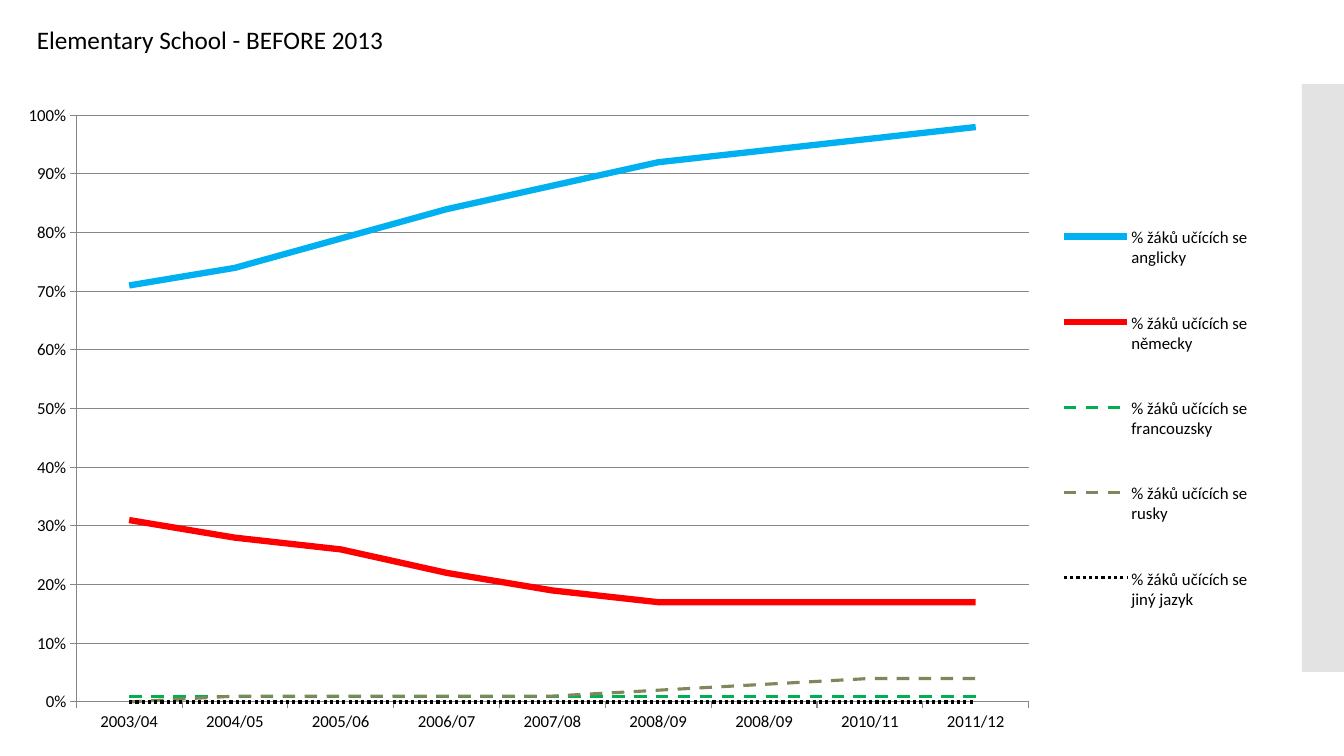
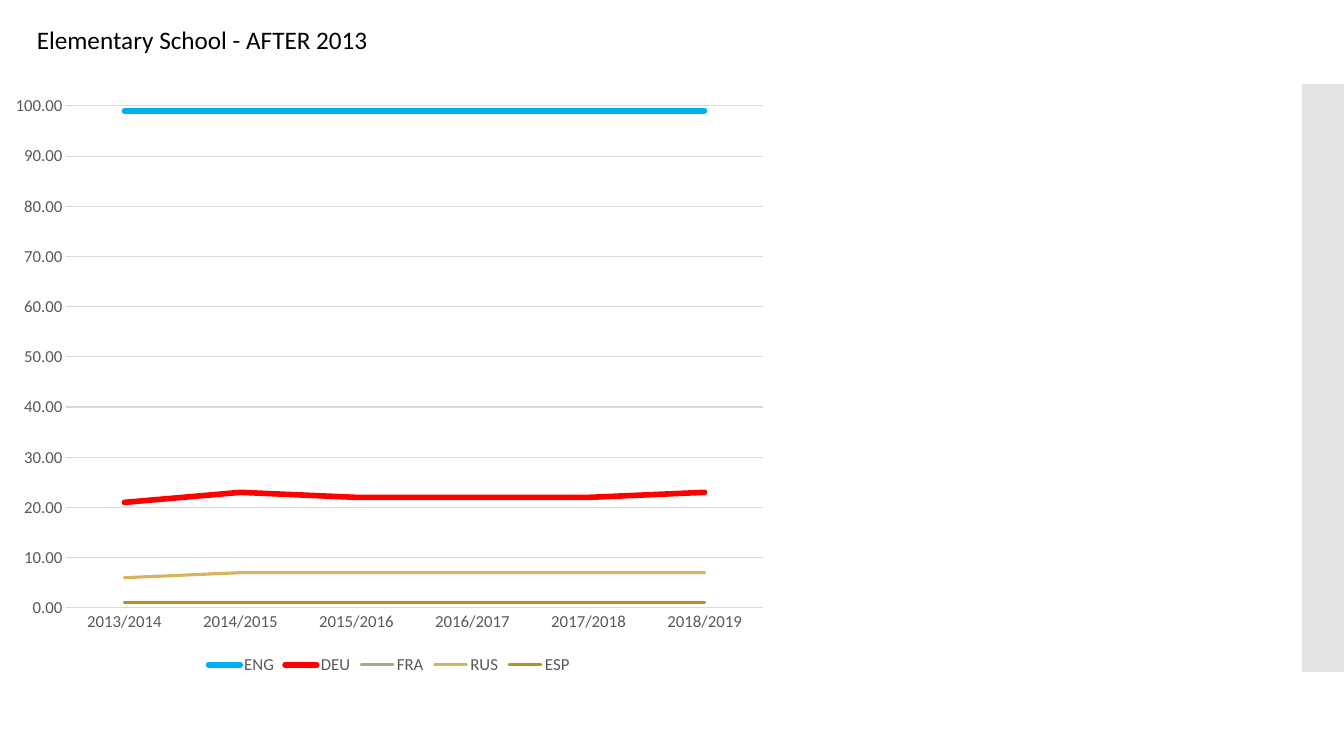
from lxml.etree import SubElement
from pptx import Presentation
from pptx.chart.data import CategoryChartData
from pptx.dml.color import RGBColor
from pptx.enum.chart import XL_CHART_TYPE, XL_LEGEND_POSITION, XL_TICK_MARK
from pptx.enum.dml import MSO_LINE
from pptx.enum.shapes import MSO_SHAPE
from pptx.enum.text import MSO_AUTO_SIZE
from pptx.oxml import parse_xml
from pptx.oxml.ns import nsdecls, qn
from pptx.util import Inches, Pt

FONT = "Calibri"
BLACK, GRAY, RULE, LIGHT = "000000", "595959", "868686", "D9D9D9"
DASH, DOT = MSO_LINE.DASH, MSO_LINE.ROUND_DOT


def rgb(color):
    return RGBColor.from_string(color)


def add_layout(parent, after, box, inner=False):
    for old in parent.findall(qn("c:layout")):
        parent.remove(old)
    x, y, w, h = box
    target = '<c:layoutTarget val="inner"/>' if inner else ""
    layout = parse_xml(
        f'<c:layout {nsdecls("c")}><c:manualLayout>{target}'
        '<c:xMode val="edge"/><c:yMode val="edge"/>'
        f'<c:x val="{x}"/><c:y val="{y}"/><c:w val="{w}"/><c:h val="{h}"/>'
        '</c:manualLayout></c:layout>')
    if after is None:
        parent.insert(0, layout)
    else:
        after.addnext(layout)


prs = Presentation()
prs.slide_width, prs.slide_height = Inches(13.33), Inches(7.5)
W, H = prs.slide_width, prs.slide_height
blank = prs.slide_layouts[6]

pupils = "% žáků učících se "
pages = [
    dict(
        title="Elementary School - BEFORE 2013",
        box=(0, 0.108, 0.945, 0.892),
        cats=["2003/04", "2004/05", "2005/06", "2006/07", "2007/08",
              "2008/09", "2008/09", "2010/11", "2011/12"],
        series=[
            (pupils + "anglicky", "00B0F0", 4.5, None,
             [0.71, 0.74, 0.79, 0.84, 0.88, 0.92, 0.94, 0.96, 0.98]),
            (pupils + "německy", "FF0000", 4.5, None,
             [0.31, 0.28, 0.26, 0.22, 0.19, 0.17, 0.17, 0.17, 0.17]),
            (pupils + "francouzsky", "00B050", 2.25, DASH, [0.01] * 9),
            (pupils + "rusky", "81875A", 2.25, DASH,
             [0, 0.01, 0.01, 0.01, 0.01, 0.02, 0.03, 0.04, 0.04]),
            (pupils + "jiný jazyk", BLACK, 2.25, DOT, [0] * 9),
        ],
        top=1, fmt="0%", text=BLACK, rule=RULE, tick=XL_TICK_MARK.OUTSIDE,
        axis_line=True, legend=XL_LEGEND_POSITION.RIGHT,
        plot_box=(0.06, 0.05, 0.75, 0.87), legend_box=(0.83, 0.15, 0.16, 0.7),
    ),
    dict(
        title="Elementary School - AFTER 2013",
        box=(0, 1 / 9, 0.579, 0.787),
        cats=[f"{year}/{year + 1}" for year in range(2013, 2019)],
        series=[
            ("ENG", "00B0F0", 4, None, [99] * 6),
            ("DEU", "FF0000", 4, None, [21, 23, 22, 22, 22, 23]),
            ("FRA", "A5AB81", 2.25, None, [1] * 6),
            ("RUS", "D8B25C", 2.25, None, [6, 7, 7, 7, 7, 7]),
            ("ESP", "BA8F2D", 2.25, None, [1] * 6),
        ],
        top=100, fmt="0.00", text=GRAY, rule=LIGHT, tick=XL_TICK_MARK.NONE,
        axis_line=False, legend=XL_LEGEND_POSITION.BOTTOM,
        plot_box=None, legend_box=None,
    ),
]

slides = [prs.slides.add_slide(blank) for page in pages]

master_tree = prs.slide_master.shapes.element
for x, w, color, alpha in [(0, 0.283, "94B6D2", 100), (31 / 32, 1 / 32, "C8C8C8", 50)]:
    band = slides[0].shapes.add_shape(
        MSO_SHAPE.RECTANGLE, int(W * x), int(H / 9), int(W * w), int(H * 7 / 9))
    band.shadow.inherit = False
    band.fill.solid()
    band.fill.fore_color.rgb = rgb(color)
    band.line.fill.background()
    if alpha < 100:
        clr = band.element.spPr.find(qn("a:solidFill"))[0]
        SubElement(clr, qn("a:alpha")).set("val", str(alpha * 1000))
    master_tree.insert(2, band.element)

for s, page in zip(slides, pages):
    data = CategoryChartData(number_format=page["fmt"])
    data.categories = page["cats"]
    for name, color, width, dash, vals in page["series"]:
        data.add_series(name, vals)
    x, y, w, h = page["box"]
    chart = s.shapes.add_chart(
        XL_CHART_TYPE.LINE, int(W * x), int(H * y), int(W * w), int(H * h), data).chart
    chart.has_title = False
    chart.font.name = FONT
    chart.font.size = Pt(12)
    chart.font.color.rgb = rgb(page["text"])
    chart_xml = chart.element.find(qn("c:chart"))
    chart_xml.addnext(parse_xml(
        f'<c:spPr {nsdecls("c", "a")}><a:solidFill><a:srgbClr val="FFFFFF"/></a:solidFill>'
        '<a:ln><a:noFill/></a:ln></c:spPr>'))

    plot = chart.plots[0]
    plot.vary_by_categories = False
    for ser, (name, color, width, dash, vals) in zip(plot.series, page["series"]):
        ser.smooth = False
        line = ser.format.line
        line.color.rgb = rgb(color)
        line.width = Pt(width)
        if dash:
            line.dash_style = dash
    if not page["axis_line"]:
        for ser_xml in chart_xml.iter(qn("c:ser")):
            ser_xml.find(qn("c:spPr")).find(qn("a:ln")).set("cap", "rnd")

    cat_axis, val_axis = chart.category_axis, chart.value_axis
    val_axis.minimum_scale = 0
    val_axis.maximum_scale = page["top"]
    val_axis.major_unit = page["top"] / 10
    val_axis.tick_labels.number_format = page["fmt"]
    val_axis.tick_labels.number_format_is_linked = False
    val_axis.has_major_gridlines = True
    for axis in (cat_axis, val_axis):
        axis.major_tick_mark = page["tick"]
        axis.minor_tick_mark = XL_TICK_MARK.NONE
        axis.tick_labels.font.size = Pt(12)
    for line in (cat_axis.format.line, val_axis.format.line,
                 val_axis.major_gridlines.format.line):
        line.color.rgb = rgb(page["rule"])
        line.width = Pt(0.75)
    if not page["axis_line"]:
        val_axis.format.line.fill.background()

    chart.has_legend = True
    legend = chart.legend
    legend.position = page["legend"]
    legend.include_in_layout = False
    legend.font.size = Pt(12)
    legend.font.color.rgb = rgb(page["text"])
    if page["plot_box"]:
        add_layout(chart_xml.find(qn("c:plotArea")), None, page["plot_box"], True)
        legend_xml = chart_xml.find(qn("c:legend"))
        add_layout(legend_xml, legend_xml.find(qn("c:legendPos")), page["legend_box"])

    tf = s.shapes.add_textbox(
        int(W * 0.02), int(H * 0.025), int(W * 0.4), int(H * 0.053)).text_frame
    tf.word_wrap = True
    tf.auto_size = MSO_AUTO_SIZE.SHAPE_TO_FIT_TEXT
    r = tf.paragraphs[0].add_run()
    r.text = page["title"]
    r.font.name = FONT
    r.font.size = Pt(18)
    r.font.color.rgb = rgb(BLACK)

prs.save("out.pptx")
